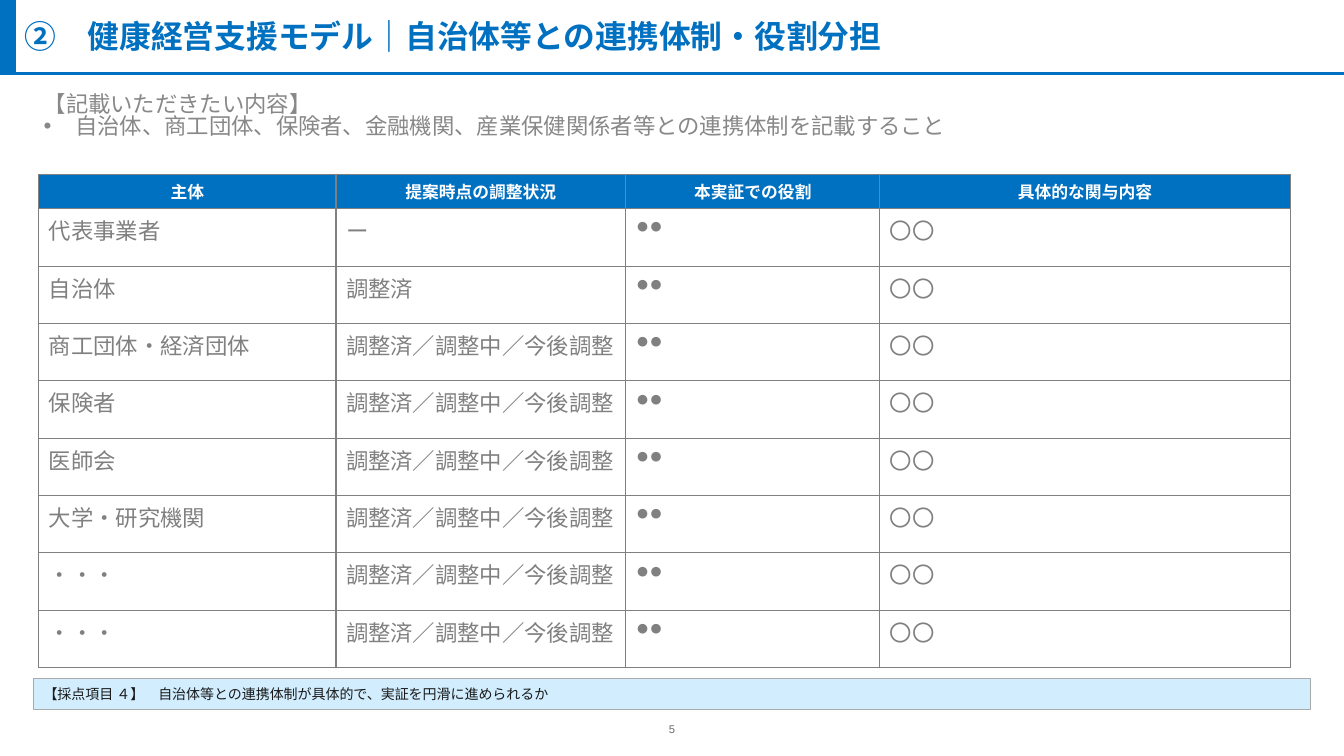
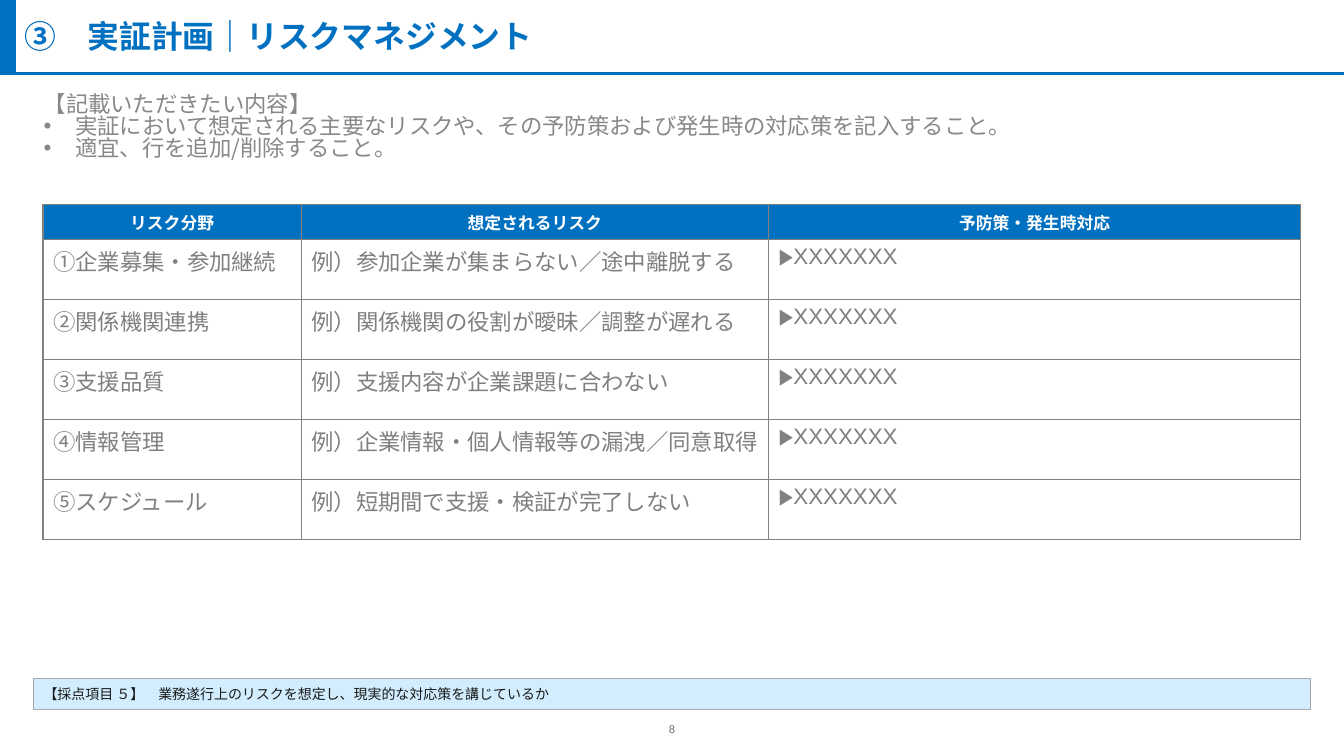
from lxml.etree import SubElement
from pptx import Presentation
from pptx.dml.color import RGBColor
from pptx.enum.shapes import MSO_CONNECTOR, MSO_SHAPE
from pptx.enum.text import MSO_ANCHOR as Anchor, MSO_AUTO_SIZE as AutoSize, PP_ALIGN as Align
from pptx.oxml.ns import qn
from pptx.util import Pt

PX = 9525
WIDTH, HEIGHT = 1280, 720
LATIN, JAPANESE = "Arial", "Noto Sans CJK JP"
COLORS = {
    "accent": "0070C0",
    "white": "FFFFFF",
    "guidance": "888888",
    "cell": "808080",
    "band": "D1EDFE",
    "band_line": "AAAAAA",
    "ink": "1A1A1A",
    "page": "6B6B6B",
}

TITLE_BOX = (23, 4, 1216, 61)
GUIDANCE_BOX = (32, 86, 1216, 107)
CRITERION_BOX = (32, 646, 1216, 30)
PAGE_BOX = (624, 689, 32, 10)
BAR_WIDTH, RULE_Y = 15, 70
HEADER_HEIGHT = 32
BULLET_INDENT = 30

UNDECIDED = "調整済／調整中／今後調整"
PARTNERS = [
    ("代表事業者", "ー"),
    ("自治体", "調整済"),
    ("商工団体・経済団体", UNDECIDED),
    ("保険者", UNDECIDED),
    ("医師会", UNDECIDED),
    ("大学・研究機関", UNDECIDED),
    ("・・・", UNDECIDED),
    ("・・・", UNDECIDED),
]
RISKS = [
    ("①企業募集・参加継続", "例）参加企業が集まらない／途中離脱する"),
    ("②関係機関連携", "例）関係機関の役割が曖昧／調整が遅れる"),
    ("③支援品質", "例）支援内容が企業課題に合わない"),
    ("④情報管理", "例）企業情報・個人情報等の漏洩／同意取得"),
    ("⑤スケジュール", "例）短期間で支援・検証が完了しない"),
]

SLIDES = [
    {
        "title": "②　健康経営支援モデル｜自治体等との連携体制・役割分担",
        "guidance": ["自治体、商工団体、保険者、金融機関、産業保健関係者等との連携体制を記載すること"],
        "criterion": "【採点項目 ４】　自治体等との連携体制が具体的で、実証を円滑に進められるか",
        "page": "5",
        "table_box": (37, 166, 1192, 469),
        "columns": (283, 276, 242, 391),
        "rows": [("主体", "提案時点の調整状況", "本実証での役割", "具体的な関与内容")]
        + [(*partner, "●●", "〇〇") for partner in PARTNERS],
    },
    {
        "title": "③　実証計画｜リスクマネジメント",
        "guidance": [
            "実証において想定される主要なリスクや、その予防策および発生時の対応策を記入すること。",
            "適宜、行を追加/削除すること。",
        ],
        "criterion": "【採点項目 ５】　業務遂行上のリスクを想定し、現実的な対応策を講じているか",
        "page": "8",
        "table_box": (41, 195, 1198, 318),
        "columns": (246, 445, 507),
        "rows": [("リスク分野", "想定されるリスク", "予防策・発生時対応")]
        + [(*risk, "▶XXXXXXX") for risk in RISKS],
    },
]


def emu(*lengths):
    return [round(length * PX) for length in lengths]


def rgb(name):
    return RGBColor.from_string(COLORS[name])


def style(paragraph, size, color, bold=False, latin=JAPANESE, align=Align.LEFT):
    paragraph.alignment = align
    font = paragraph.font
    font.size, font.bold, font.name = Pt(size), bold, latin
    font.color.rgb = rgb(color)
    SubElement(font._rPr, qn("a:ea"), typeface=JAPANESE)


def place(shape, box):
    shape.left, shape.top, shape.width, shape.height = emu(*box)


def prepare_frame(frame, anchor, inset=None):
    frame.word_wrap = True
    frame.auto_size = AutoSize.NONE
    frame.vertical_anchor = anchor
    if inset is not None:
        frame.margin_left = frame.margin_right = inset
        frame.margin_top = frame.margin_bottom = inset


def add_rectangle(slide, box, fill, line, line_width):
    shape = slide.shapes.add_shape(MSO_SHAPE.RECTANGLE, *emu(*box))
    shape.shadow.inherit = False
    shape.fill.solid()
    shape.fill.fore_color.rgb = rgb(fill)
    shape.line.color.rgb = rgb(line)
    shape.line.width = Pt(line_width)
    return shape


def add_heading(slide, text, box):
    title = slide.shapes.title
    place(title, box)
    prepare_frame(title.text_frame, Anchor.MIDDLE, 0)
    title.text_frame.text = text
    style(title.text_frame.paragraphs[0], 22.7, "accent", bold=True)

    add_rectangle(slide, (0, 0, BAR_WIDTH, RULE_Y), "accent", "accent", 1)
    rule = slide.shapes.add_connector(MSO_CONNECTOR.STRAIGHT, *emu(0, RULE_Y, WIDTH, RULE_Y))
    rule.line.color.rgb = rgb("accent")
    rule.line.width = Pt(1.5)
    SubElement(rule._element.spPr, qn("a:effectLst"))


def set_bullet(paragraph, bulleted):
    properties = paragraph._p.get_or_add_pPr()
    indent = BULLET_INDENT * PX if bulleted else 0
    properties.set("marL", str(indent))
    properties.set("indent", str(-indent))
    if bulleted:
        SubElement(properties, qn("a:buFont"), typeface=LATIN)
        SubElement(properties, qn("a:buChar"), char="•")
    else:
        SubElement(properties, qn("a:buNone"))


def add_guidance(slide, items, box):
    body = slide.placeholders[1]
    place(body, box)
    body.fill.solid()
    body.fill.fore_color.rgb = rgb("white")
    frame = body.text_frame
    prepare_frame(frame, Anchor.TOP)
    frame.text = "\n".join(["【記載いただきたい内容】", *items])
    for index, paragraph in enumerate(frame.paragraphs):
        set_bullet(paragraph, index > 0)
        paragraph.space_before = Pt(0)
        paragraph.line_spacing = 0.82
        style(paragraph, 16, "guidance")


def add_criterion(slide, text, box):
    band = add_rectangle(slide, box, "band", "band_line", 0.5)
    prepare_frame(band.text_frame, Anchor.MIDDLE)
    band.text_frame.text = text
    style(band.text_frame.paragraphs[0], 10, "ink")


def add_page_number(slide, text, box):
    frame = slide.shapes.add_textbox(*emu(*box)).text_frame
    prepare_frame(frame, Anchor.MIDDLE, 0)
    frame.text = text
    style(frame.paragraphs[0], 8, "page", latin=LATIN, align=Align.CENTER)


def add_borders(cell):
    properties = cell._tc.get_or_add_tcPr()
    for side in ("lnL", "lnR", "lnT", "lnB"):
        line = SubElement(properties, qn(f"a:{side}"), w=str(Pt(1)))
        fill = SubElement(line, qn("a:solidFill"))
        SubElement(fill, qn("a:srgbClr"), val=COLORS["cell"])


def add_grid(slide, rows, columns, box):
    """Add a table whose body rows share the height left under the header."""
    table = slide.shapes.add_table(len(rows), len(columns), *emu(*box)).table
    table.first_row = table.horz_banding = False
    for column, width in zip(table.columns, columns):
        column.width = width * PX
    body_height = (box[3] - HEADER_HEIGHT) / (len(rows) - 1)
    for row_index, texts in enumerate(rows):
        header = row_index == 0
        table.rows[row_index].height = emu(HEADER_HEIGHT if header else body_height)[0]
        for column_index, text in enumerate(texts):
            cell = table.cell(row_index, column_index)
            add_borders(cell)
            cell.text = text
            paragraph = cell.text_frame.paragraphs[0]
            if header:
                cell.fill.solid()
                cell.fill.fore_color.rgb = rgb("accent")
                style(paragraph, 12, "white", bold=True, latin=LATIN, align=Align.CENTER)
            else:
                cell.fill.background()
                style(paragraph, 16, "cell", latin=LATIN)


def add_table_slide(presentation, content):
    slide = presentation.slides.add_slide(presentation.slide_layouts[1])
    add_heading(slide, content["title"], TITLE_BOX)
    add_guidance(slide, content["guidance"], GUIDANCE_BOX)
    add_criterion(slide, content["criterion"], CRITERION_BOX)
    add_grid(slide, content["rows"], content["columns"], content["table_box"])
    add_page_number(slide, content["page"], PAGE_BOX)


def main():
    presentation = Presentation()
    presentation.slide_width, presentation.slide_height = emu(WIDTH, HEIGHT)
    for content in SLIDES:
        add_table_slide(presentation, content)
    presentation.save("out.pptx")


if __name__ == "__main__":
    main()
